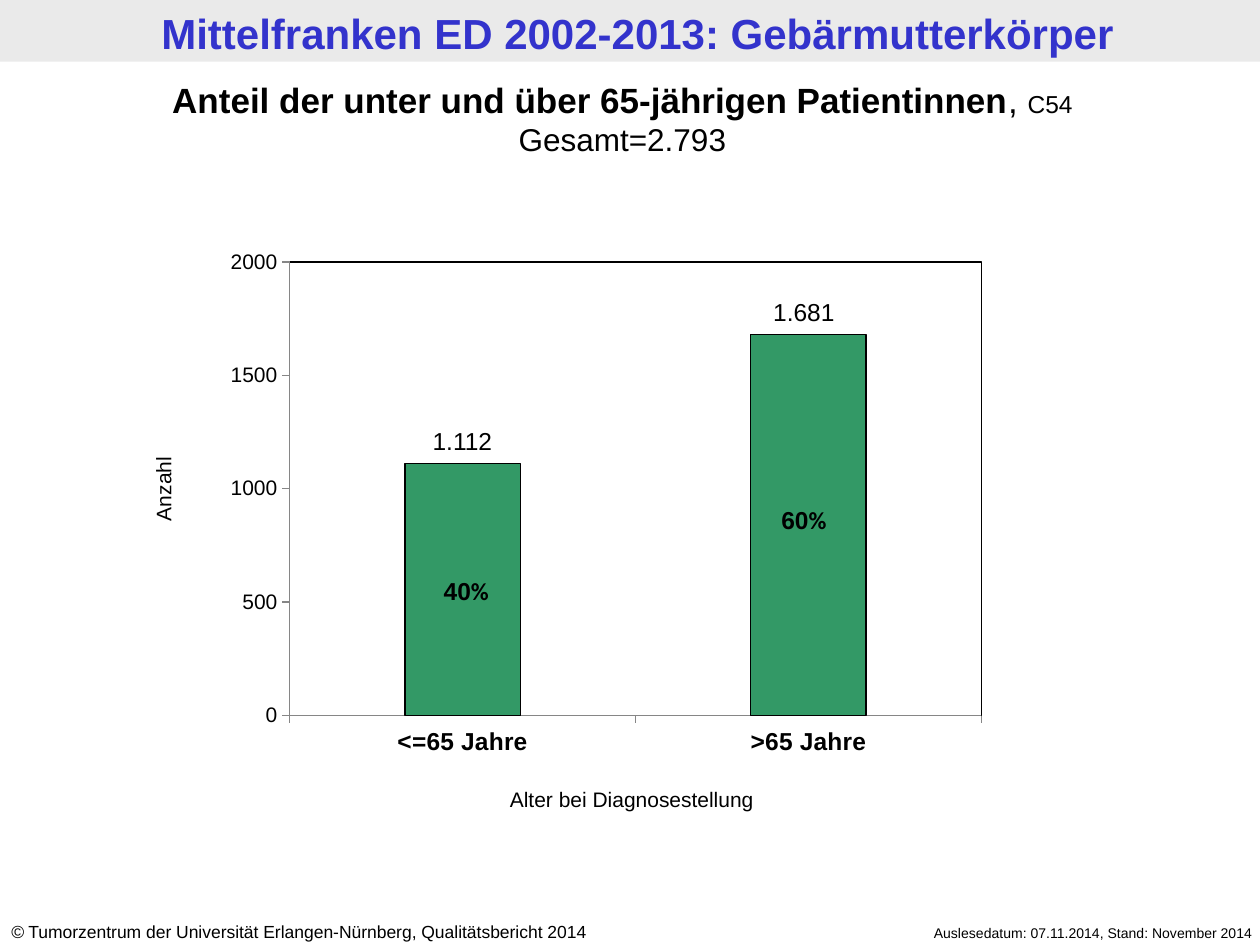
from dataclasses import dataclass

import pptx
import pptx.chart.data
import pptx.dml.color
import pptx.enum.chart
import pptx.enum.shapes
import pptx.enum.text
import pptx.oxml
import pptx.util

Inches, Pt = pptx.util.Inches, pptx.util.Pt
RGB = pptx.dml.color.RGBColor.from_string
ALIGN = pptx.enum.text.PP_ALIGN


@dataclass(frozen=True)
class Theme:
    font: str = "Arial"
    symbol_font: str = "Calibri"
    text: str = "000000"
    title: str = "3333CC"
    band: str = "EAEAEA"
    bar: str = "339966"
    axis: str = "868686"
    title_size: int = 24
    heading_size: int = 20
    total_size: int = 18
    label_size: int = 14
    axis_size: int = 12
    footer_size: int = 10
    date_size: int = 8


THEME = Theme()


@dataclass(frozen=True)
class Run:
    text: str
    size: int
    bold: bool = False
    italic: bool = False
    color: str = THEME.text
    font: str = THEME.font


@dataclass(frozen=True)
class Label:
    left: float
    top: float
    width: float
    height: float
    lines: list[list[Run]]
    align: ALIGN = ALIGN.CENTER
    rotation: int = 0


@dataclass(frozen=True)
class Box:
    left: float
    top: float
    width: float
    height: float


CHART = Box(1.51, 1.42, 6.98, 4.66)
PLOT = Box(0.79, 0.66, 5.49, 3.6)  # inches inside the chart


def add_label(s, label: Label) -> None:
    sp = s.shapes.add_textbox(Inches(label.left), Inches(label.top),
                              Inches(label.width), Inches(label.height))
    sp.rotation = label.rotation
    tf = sp.text_frame
    tf.word_wrap = True
    for i, line in enumerate(label.lines):
        p = tf.paragraphs[0] if i == 0 else tf.add_paragraph()
        p.alignment = label.align
        for run in line:
            r = p.add_run()
            r.text = run.text
            r.font.name = run.font
            r.font.size = Pt(run.size)
            r.font.bold = run.bold
            r.font.italic = run.italic
            r.font.color.rgb = RGB(run.color)


def frame_plot(chart) -> None:
    """Fix the inner plot area and give it a thin border."""
    ns = ('xmlns:c="http://schemas.openxmlformats.org/drawingml/2006/chart" '
          'xmlns:a="http://schemas.openxmlformats.org/drawingml/2006/main"')
    plot_area = chart.element.xpath("c:chart/c:plotArea")[0]
    for old in plot_area.xpath("c:layout"):
        plot_area.remove(old)
    shares = {"x": PLOT.left / CHART.width, "y": PLOT.top / CHART.height,
              "w": PLOT.width / CHART.width, "h": PLOT.height / CHART.height}
    sizes = "".join(f'<c:{k} val="{v:.4f}"/>' for k, v in shares.items())
    plot_area.insert(0, pptx.oxml.parse_xml(
        f'<c:layout {ns}><c:manualLayout><c:layoutTarget val="inner"/>'
        f'<c:xMode val="edge"/><c:yMode val="edge"/>{sizes}'
        f'</c:manualLayout></c:layout>'))
    plot_area.append(pptx.oxml.parse_xml(
        f'<c:spPr {ns}><a:noFill/><a:ln w="{Pt(0.75)}"><a:solidFill>'
        f'<a:srgbClr val="{THEME.text}"/></a:solidFill></a:ln></c:spPr>'))


def style_axis(axis, size: int, bold: bool) -> None:
    axis.has_major_gridlines = False
    axis.major_tick_mark = pptx.enum.chart.XL_TICK_MARK.OUTSIDE
    axis.format.line.color.rgb = RGB(THEME.axis)
    font = axis.tick_labels.font
    font.name, font.size, font.bold = THEME.font, Pt(size), bold
    font.color.rgb = RGB(THEME.text)


def add_age_chart(s) -> None:
    data = pptx.chart.data.CategoryChartData()
    data.categories = ["<=65 Jahre", ">65 Jahre"]
    data.add_series("Anzahl", [1110, 1680])
    chart = s.shapes.add_chart(
        pptx.enum.chart.XL_CHART_TYPE.COLUMN_STACKED,
        Inches(CHART.left), Inches(CHART.top),
        Inches(CHART.width), Inches(CHART.height), data).chart
    chart.has_legend = False
    chart.has_title = False
    chart.font.name, chart.font.size = THEME.symbol_font, Pt(THEME.total_size)
    chart.font.color.rgb = RGB(THEME.text)

    plot = chart.plots[0]
    plot.gap_width, plot.overlap = 200, 100
    plot.vary_by_categories = False
    bars = plot.series[0].format
    bars.fill.solid()
    bars.fill.fore_color.rgb = RGB(THEME.bar)
    bars.line.color.rgb = RGB(THEME.text)
    bars.line.width = Pt(0.75)

    style_axis(chart.category_axis, THEME.label_size, True)
    style_axis(chart.value_axis, THEME.axis_size, False)
    chart.value_axis.minimum_scale = 0
    chart.value_axis.maximum_scale = 2000
    chart.value_axis.major_unit = 500
    frame_plot(chart)


def bar_label(left: float, top: float, runs: list[Run]) -> Label:
    return Label(left, top, 1.02, 0.34, [runs])


def percent(value: str) -> list[Run]:
    return [Run(value, THEME.label_size, bold=True),
            Run("%", THEME.label_size, bold=True, font=THEME.symbol_font)]


def count(value: str) -> list[Run]:
    return [Run(value, THEME.label_size)]


LABELS = [
    # Title and footer
    Label(0.06, 0.01, 10, 0.49, [[
        Run("Mittelfranken ED 2002-2013: Gebärmutterkörper",
            THEME.title_size, bold=True, color=THEME.title)]]),
    Label(6.65, 7.29, 3.39, 0.24, [[
        Run("Auslesedatum: 07.11.2014, Stand: November 2014", THEME.date_size)]],
        ALIGN.RIGHT),
    Label(-0.01, 7.26, 5.24, 0.27, [[
        Run("©", THEME.footer_size, italic=True),
        Run(" Tumorzentrum der Universität Erlangen-Nürnberg, "
            "Qualitätsbericht 2014", THEME.footer_size)]], ALIGN.LEFT),
    # Heading
    Label(0, 0.57, 9.88, 0.74, [
        [Run("Anteil der unter und über 65-jährigen Patientinnen",
             THEME.heading_size, bold=True),
         Run(", ", THEME.heading_size),
         Run("C54", THEME.label_size)],
        [Run("Gesamt=2.793", THEME.total_size)]]),
    # Bar labels
    bar_label(3.19, 4.52, percent("40")),
    bar_label(5.87, 3.96, percent("60")),
    bar_label(3.16, 3.33, count("1.112")),
    bar_label(5.87, 2.31, count("1.681")),
    # Axis titles
    Label(3.35, 6.19, 3.33, 0.3,
          [[Run("Alter bei Diagnosestellung", THEME.axis_size)]]),
    Label(-0.01, 3.73, 2.61, 0.3, [[Run("Anzahl", THEME.axis_size)]],
          rotation=270),
]


def main() -> None:
    prs = pptx.Presentation()
    prs.slide_width, prs.slide_height = Inches(10), Inches(7.5)
    s = prs.slides.add_slide(prs.slide_layouts[6])

    # Title band
    band = s.shapes.add_shape(pptx.enum.shapes.MSO_SHAPE.RECTANGLE,
                              0, 0, prs.slide_width, Inches(0.49))
    band.shadow.inherit = False
    band.fill.solid()
    band.fill.fore_color.rgb = RGB(THEME.band)
    band.line.fill.background()

    # Chart, then the text on top of it
    add_age_chart(s)
    for label in LABELS:
        add_label(s, label)
    prs.save("out.pptx")


if __name__ == "__main__":
    main()
